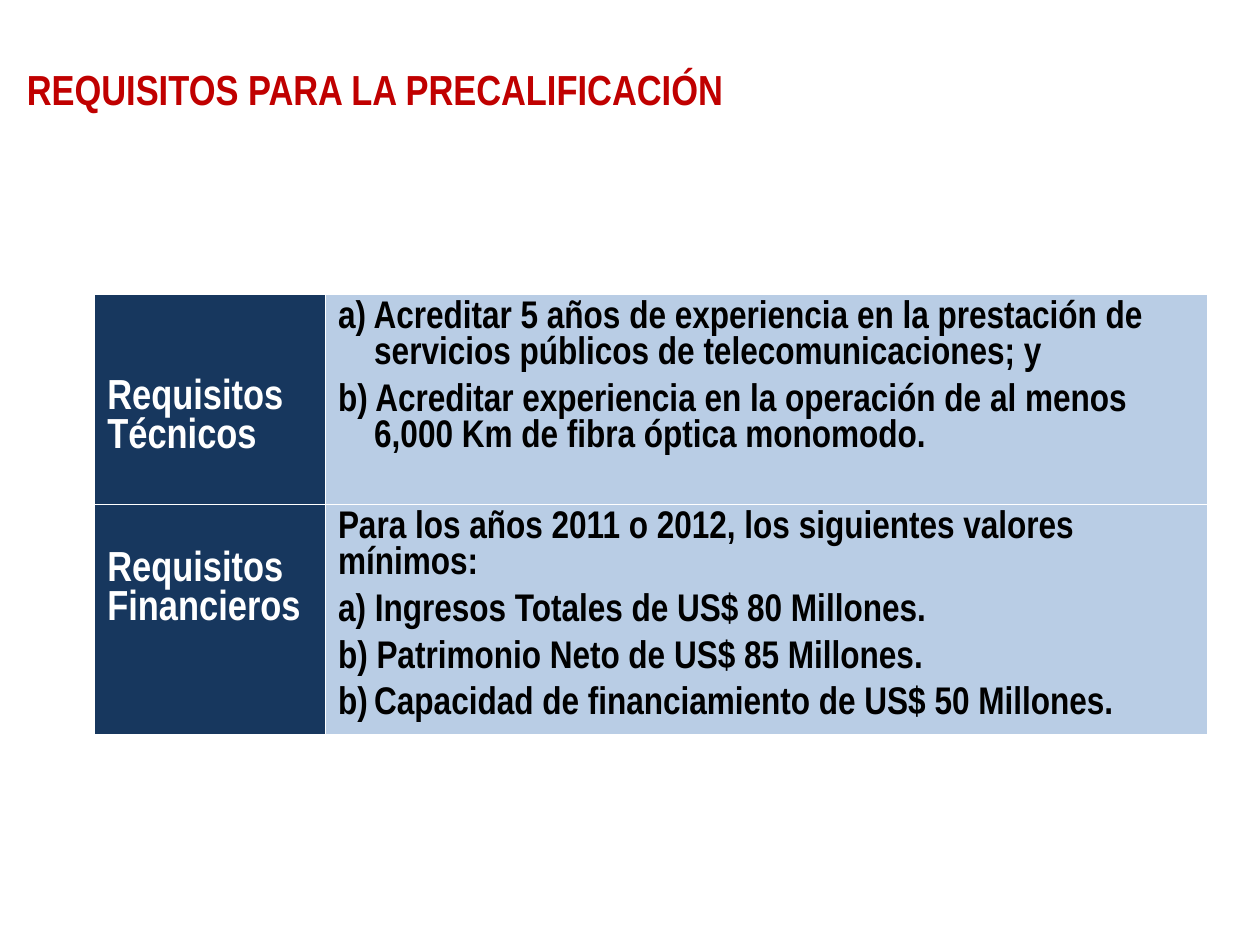
from dataclasses import dataclass

from lxml import etree
from pptx import Presentation
from pptx.dml.color import RGBColor
from pptx.enum import text as t
from pptx.oxml import ns
from pptx.util import Cm, Pt

RED = RGBColor(0xC0, 0x00, 0x00)
NAVY = RGBColor(0x17, 0x37, 0x5E)
PALE = RGBColor(0xB9, 0xCD, 0xE5)
WHITE = RGBColor(0xFF, 0xFF, 0xFF)
BLACK = RGBColor(0x00, 0x00, 0x00)
FONT = "Arial Narrow"
HANG = Cm(0.73)


@dataclass
class Item:
    text: str
    hang: bool = True
    start: int = 0  # first automatic letter, 0 for none


@dataclass
class Row:
    label: str
    drop: float  # space above the label, in cm
    height: float
    items: list[Item]


ROWS = [
    Row("Requisitos Técnicos", 1.7, 4.24, [
        Item("a) Acreditar 5 años de experiencia en la prestación de "
             "servicios públicos de telecomunicaciones; y"),
        Item("b) Acreditar experiencia en la operación de al menos "
             "6,000 Km de fibra óptica monomodo."),
    ]),
    Row("Requisitos Financieros", 0.93, 4.65, [
        Item("Para los años 2011 o 2012, los siguientes valores mínimos:",
             hang=False),
        Item("a) Ingresos Totales de US$ 80 Millones."),
        Item("b) Patrimonio Neto de US$ 85 Millones."),
        Item("Capacidad de financiamiento de US$ 50 Millones.", start=2),
    ]),
]


def style(par, size: int, color: RGBColor) -> None:
    font = par.font
    font.name, font.size, font.bold = FONT, Pt(size), True
    font.color.rgb = color


def paint(cell, color: RGBColor) -> None:
    cell.fill.solid()
    cell.fill.fore_color.rgb = color


def add_title(slide) -> None:
    title = slide.shapes.title
    title.left, title.top = Cm(0.03), Cm(1.07)
    title.width, title.height = Cm(17.32), Cm(1.45)
    frame = title.text_frame
    frame.text = "REQUISITOS PARA LA PRECALIFICACIÓN"
    frame.vertical_anchor = t.MSO_ANCHOR.MIDDLE
    frame.margin_left = Cm(0.51)
    par = frame.paragraphs[0]
    par.alignment = t.PP_ALIGN.LEFT
    style(par, 24, RED)


def fill_label(cell, row: Row) -> None:
    paint(cell, NAVY)
    cell.margin_top = Cm(row.drop)
    cell.text = row.label
    style(cell.text_frame.paragraphs[0], 24, WHITE)


def fill_list(cell, items: list[Item]) -> None:
    paint(cell, PALE)
    cell.text = "\n".join(item.text for item in items)
    for par, item in zip(cell.text_frame.paragraphs, items):
        par.space_after = Pt(6)
        props = par._p.get_or_add_pPr()
        if item.hang:
            props.set("marL", str(HANG))
            props.set("indent", str(-HANG))
        if item.start:
            etree.SubElement(props, ns.qn("a:buFont"), typeface="+mj-lt")
            etree.SubElement(props, ns.qn("a:buAutoNum"),
                             type="alphaLcParenR", startAt=str(item.start))
        style(par, 22, BLACK)


def add_grid(slide) -> None:
    high = Cm(sum(row.height for row in ROWS))
    grid = slide.shapes.add_table(
        len(ROWS), 2, Cm(1.91), Cm(5.93), Cm(22.43), high).table
    grid.horz_banding = False
    for col, width in zip(grid.columns, (4.65, 17.78)):
        col.width = Cm(width)
    for i, row in enumerate(ROWS):
        grid.rows[i].height = Cm(row.height)
        fill_label(grid.cell(i, 0), row)
        fill_list(grid.cell(i, 1), row.items)


def main() -> None:
    deck = Presentation()
    deck.slide_width, deck.slide_height = Cm(25.4), Cm(19.05)
    slide = deck.slides.add_slide(deck.slide_layouts[5])
    add_title(slide)
    add_grid(slide)
    deck.save("out.pptx")


if __name__ == "__main__":
    main()
